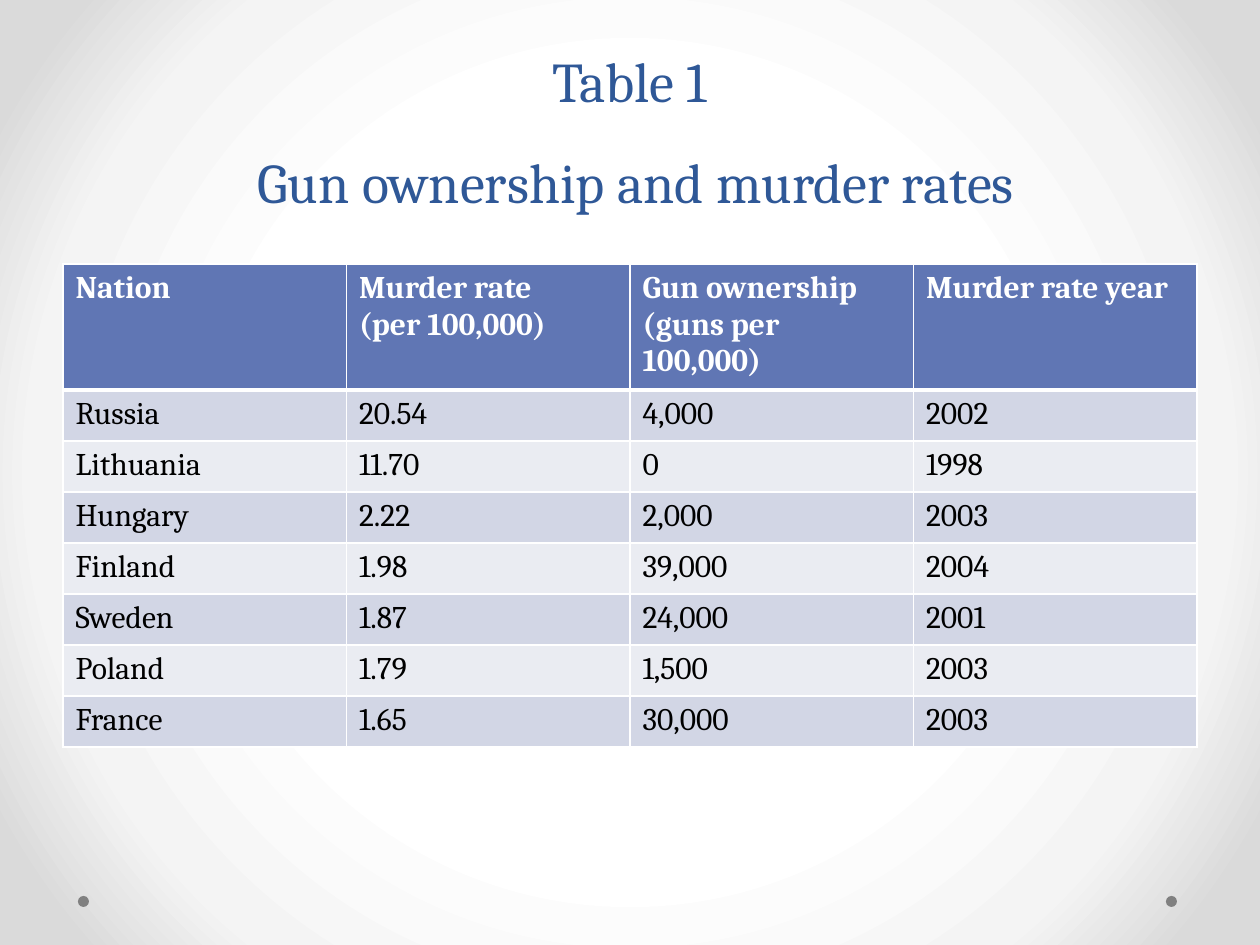
from dataclasses import dataclass

from lxml.etree import fromstring
from pptx import Presentation
from pptx.dml.color import RGBColor as Rgb
from pptx.enum.shapes import MSO_SHAPE as Shape
from pptx.enum.text import MSO_ANCHOR as Anchor, PP_ALIGN as Align
from pptx.oxml.ns import nsdecls, qn
from pptx.util import Emu, Pt

FONT = "Cambria"
COLORS = {
    "title": "2F5897", "header": "6076B4", "odd": "D2D6E5", "even": "EAECF2",
    "white": "FFFFFF", "text": "000000", "dot": "808080",
}
BACKDROP = {50: "FFFFFF", 76: "F4F4F4", 92: "DADADA"}
TITLE = "Table 1\v Gun ownership and murder rates"
HEADERS = ("Nation", "Murder rate\n(per 100,000)",
           "Gun ownership (guns per 100,000)", "Murder rate year")
HEADER_HEIGHT, ROW_HEIGHT = 121, 51


@dataclass(frozen=True)
class NationRow:
    nation: str
    murder_rate: str
    guns: str
    year: str

    def values(self) -> tuple[str, ...]:
        return self.nation, self.murder_rate, self.guns, self.year


@dataclass(frozen=True)
class RowStyle:
    fill: str
    color: str
    bold: bool
    bottom_border: int


NATIONS = (
    NationRow("Russia", "20.54", "4,000", "2002"),
    NationRow("Lithuania", "11.70", "0", "1998"),
    NationRow("Hungary", "2.22", "2,000", "2003"),
    NationRow("Finland", "1.98", "39,000", "2004"),
    NationRow("Sweden", "1.87", "24,000", "2001"),
    NationRow("Poland", "1.79", "1,500", "2003"),
    NationRow("France", "1.65", "30,000", "2003"),
)
HEADER_STYLE = RowStyle("header", "white", True, 3)
BODY_STYLES = (RowStyle("odd", "text", False, 1), RowStyle("even", "text", False, 1))


def px(length: int) -> Emu:
    return Emu(round(length * 914400 / 126))


def color(name: str) -> Rgb:
    return Rgb.from_string(COLORS[name])


def style_para(para, size: int, color_name: str, bold: bool = False) -> None:
    para.font.name = FONT
    para.font.size = Pt(size)
    para.font.bold = bold
    para.font.color.rgb = color(color_name)


def paint_background(page) -> None:
    page.background.fill.solid()
    properties = page.element.find(".//" + qn("p:bgPr"))
    stops = "".join(f'<a:gs pos="{stop * 1000}"><a:srgbClr val="{value}"/></a:gs>'
                    for stop, value in BACKDROP.items())
    gradient = fromstring(
        f'<a:gradFill {nsdecls("a")} rotWithShape="1"><a:gsLst>{stops}</a:gsLst>'
        '<a:path path="circle"><a:fillToRect l="50000" t="50000" r="50000" b="50000"/>'
        '</a:path></a:gradFill>')
    properties.replace(properties.find(qn("a:solidFill")), gradient)


def add_dot(page, left: int) -> None:
    dot = page.shapes.add_shape(Shape.OVAL, px(left), px(896), px(11), px(11))
    dot.shadow.inherit = False
    dot.fill.solid()
    dot.fill.fore_color.rgb = color("dot")
    dot.line.fill.background()


def add_title(page) -> None:
    box = page.shapes.add_textbox(px(63), px(-73), px(1134), px(294))
    frame = box.text_frame
    frame.word_wrap = True
    frame.vertical_anchor = Anchor.BOTTOM
    para = frame.paragraphs[0]
    para.text = TITLE
    para.alignment = Align.CENTER
    para.line_spacing = Pt(58)
    style_para(para, 32, "title")


def set_borders(cell, bottom: int) -> None:
    properties = cell._tc.get_or_add_tcPr()
    widths = {"lnL": 1, "lnR": 1, "lnT": 1, "lnB": bottom}
    for index, (side, width) in enumerate(widths.items()):
        properties.insert(index, fromstring(
            f'<a:{side} {nsdecls("a")} w="{Pt(width)}"><a:solidFill>'
            f'<a:srgbClr val="{COLORS["white"]}"/></a:solidFill></a:{side}>'))


def fill_row(row, values: tuple[str, ...], style: RowStyle) -> None:
    for cell, value in zip(row.cells, values):
        cell.text = value
        cell.fill.solid()
        cell.fill.fore_color.rgb = color(style.fill)
        set_borders(cell, style.bottom_border)
        for para in cell.text_frame.paragraphs:
            style_para(para, 18, style.color, style.bold)


def add_nation_table(page) -> None:
    height = HEADER_HEIGHT + ROW_HEIGHT * len(NATIONS)
    table = page.shapes.add_table(len(NATIONS) + 1, len(HEADERS),
                                  px(63), px(264), px(1134), px(height)).table
    header, *body = table.rows
    header.height = px(HEADER_HEIGHT)
    fill_row(header, HEADERS, HEADER_STYLE)
    for index, (row, nation) in enumerate(zip(body, NATIONS)):
        row.height = px(ROW_HEIGHT)
        fill_row(row, nation.values(), BODY_STYLES[index % 2])


def main() -> None:
    """Build the slide on gun ownership and murder rates."""
    deck = Presentation()
    deck.slide_width, deck.slide_height = px(1260), px(945)
    page = deck.slides.add_slide(deck.slide_layouts[6])
    paint_background(page)
    for left in (1166, 78):
        add_dot(page, left)
    add_title(page)
    add_nation_table(page)
    deck.save("out.pptx")


if __name__ == "__main__":
    main()
